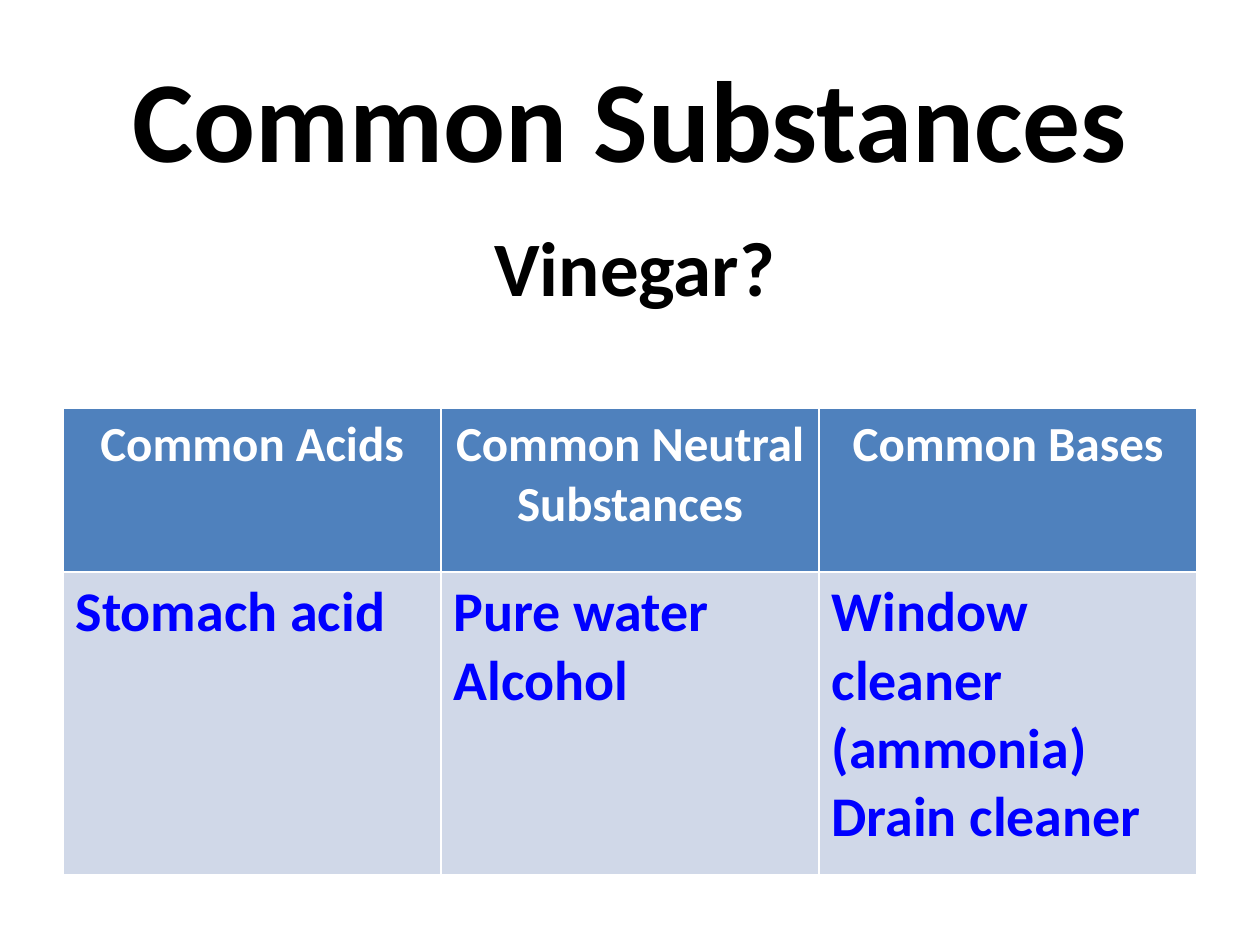
import pptx
import pptx.dml.color
import pptx.enum.text
import pptx.util

Cm = pptx.util.Cm
PP_ALIGN = pptx.enum.text.PP_ALIGN
MSO_ANCHOR = pptx.enum.text.MSO_ANCHOR

HEADERS = ["Common Acids", "Common Neutral Substances", "Common Bases"]
SUBSTANCES = [
    ["Stomach acid"],
    ["Pure water", "Alcohol"],
    ["Window cleaner (ammonia)", "Drain cleaner"],
]


def rgb(value):
    """Return the colour for a hex string."""
    return pptx.dml.color.RGBColor.from_string(value)


def write_lines(tf, lines, size, color, align):
    """Write each line as a bold paragraph in the text frame."""
    tf.word_wrap = True
    for i, line in enumerate(lines):
        p = tf.add_paragraph() if i else tf.paragraphs[0]
        p.alignment = align
        r = p.add_run()
        r.text = line
        r.font.name = "Calibri"
        r.font.size = pptx.util.Pt(size)
        r.font.bold = True
        r.font.color.rgb = rgb(color)


def add_heading(s, text, size, left, top, width, height):
    """Place a centred heading in the given box."""
    tf = s.shapes.add_textbox(Cm(left), Cm(top), Cm(width), Cm(height)).text_frame
    tf.vertical_anchor = MSO_ANCHOR.MIDDLE
    write_lines(tf, [text], size, "000000", PP_ALIGN.CENTER)


def fill_cell(cell, lines, size, color, fill, align):
    """Fill one table cell with colour and text."""
    cell.fill.solid()
    cell.fill.fore_color.rgb = rgb(fill)
    write_lines(cell.text_frame, lines, size, color, align)


def add_substance_table(s, left, top, width, height):
    """Place the table of acids, neutral substances and bases in the given box."""
    table = s.shapes.add_table(
        2, len(HEADERS), Cm(left), Cm(top), Cm(width), Cm(height)
    ).table
    header_height = 3.3
    table.rows[0].height = Cm(header_height)
    table.rows[1].height = Cm(height - header_height)
    for col, (header, lines) in enumerate(zip(HEADERS, SUBSTANCES)):
        table.columns[col].width = Cm(width / len(HEADERS))
        fill_cell(table.cell(0, col), [header], 28, "FFFFFF", "4F81BD", PP_ALIGN.CENTER)
        fill_cell(table.cell(1, col), lines, 32, "0000FF", "D0D8E8", PP_ALIGN.LEFT)


def main():
    """Build the slide and save it."""
    prs = pptx.Presentation()
    prs.slide_width, prs.slide_height = Cm(25.4), Cm(19.05)
    s = prs.slides.add_slide(prs.slide_layouts[6])
    add_heading(s, "Common Substances", 66, 1.27, 0.76, 22.86, 3.18)
    add_substance_table(s, 1.27, 8.23, 22.86, 9.4)
    add_heading(s, "Vinegar?", 44, 6.15, 4.29, 13.3, 2.14)
    prs.save("out.pptx")


if __name__ == "__main__":
    main()
